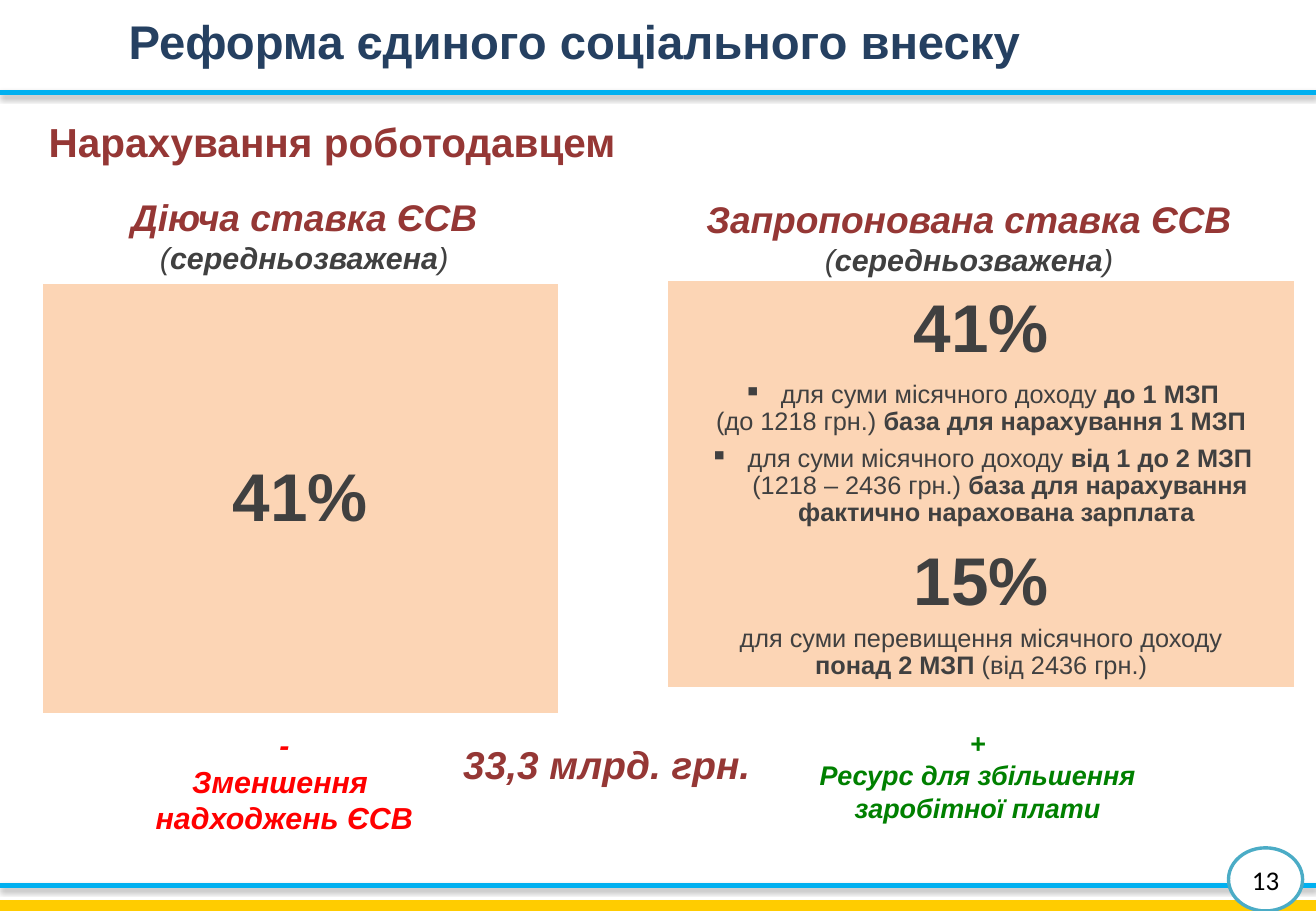
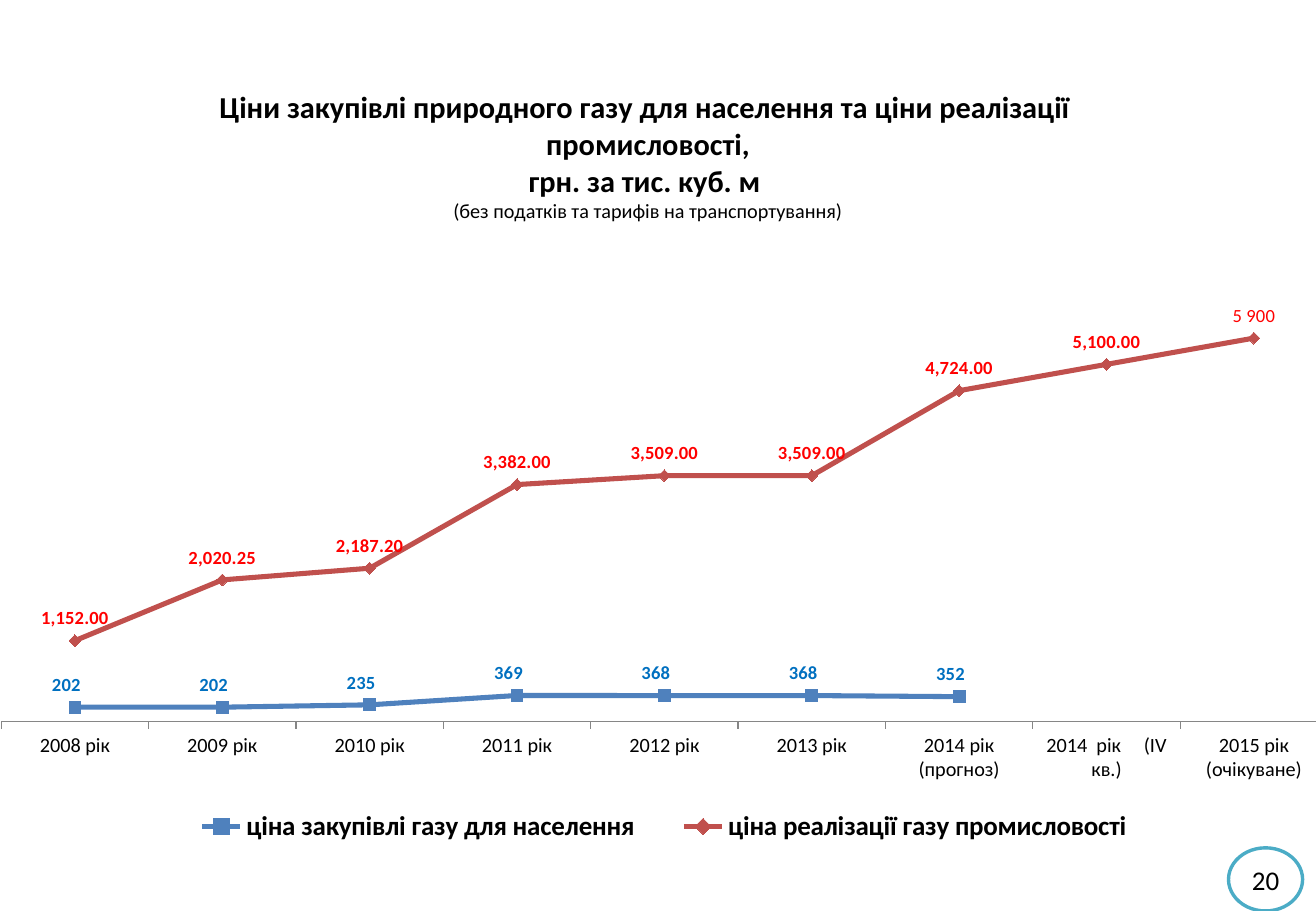
import lxml.etree
import pptx
import pptx.chart.data
import pptx.dml.color
import pptx.enum.chart
import pptx.enum.shapes
import pptx.enum.text
import pptx.oxml.ns
import pptx.util

WIDE = pptx.util.Inches(10.83)
HIGH = pptx.util.Inches(7.5)
PAGE = (0, 0, WIDE, HIGH)
NAVY, WINE, GRAY, PEACH = "254061", "953735", "404040", "FCD5B5"
SKY, GOLD, TEAL = "00B0F0", "FFCC00", "4BACC6"
RED, GREEN, BLACK, WHITE = "FF0000", "008000", "000000", "FFFFFF"
TOP = pptx.enum.text.MSO_ANCHOR.TOP
MID = pptx.enum.text.MSO_ANCHOR.MIDDLE
LEFT = pptx.enum.text.PP_ALIGN.LEFT
MARK = pptx.enum.chart.XL_MARKER_STYLE
ABOVE = pptx.enum.chart.XL_LABEL_POSITION.ABOVE
BOLD = {"bold": True}
THIN = {"bold": False}
SMALL = {"size": 15, "bold": False}
STRONG = {"size": 15, "bold": True}


def color(code):
    """Turn a hex string into a colour."""
    return pptx.dml.color.RGBColor.from_string(code)


def part(box, left, top, width, height):
    """Return a box given in percent of another box."""
    x, y, w, h = box
    return (int(x + w * left / 100), int(y + h * top / 100),
            int(w * width / 100), int(h * height / 100))


def put(item, vals):
    """Set attributes from a dict of format values."""
    for key, val in vals.items():
        setattr(item, key, val)


def style(font, vals):
    """Format a font, with its colour as hex and its size in points."""
    vals = dict(vals)
    if "color" in vals:
        font.color.rgb = color(vals.pop("color"))
    if "size" in vals:
        vals["size"] = pptx.util.Pt(vals["size"])
    put(font, vals)


def node(root, tag, **vals):
    """Add a drawing element below another one."""
    vals = {key: str(val) for key, val in vals.items()}
    return lxml.etree.SubElement(root, pptx.oxml.ns.qn(tag), vals)


def write(frame, base, paras):
    """Fill a text frame with paragraphs of formatted runs."""
    for num, (runs, form) in enumerate(paras):
        para = frame.paragraphs[0] if num == 0 else frame.add_paragraph()
        form = {"alignment": pptx.enum.text.PP_ALIGN.CENTER} | form
        sign = form.pop("sign", None)
        put(para, form)
        if sign:
            props = para._p.get_or_add_pPr()
            dent = pptx.util.Inches(0.31)
            props.set("marL", str(dent))
            props.set("indent", str(-dent))
            node(props, "a:buChar", char=sign)
        for text, vals in runs:
            run = para.add_run()
            run.text = text
            style(run.font, base | vals)


def note(slide, box, base, paras):
    """Add a wrapped text box."""
    frame = slide.shapes.add_textbox(*box).text_frame
    frame.word_wrap = True
    write(frame, base, paras)


def fill(holder, box, base, text, gap):
    """Place a placeholder and fill it with one plain line."""
    put(holder, dict(zip(("left", "top", "width", "height"), box)))
    frame = holder.text_frame
    put(frame, {"vertical_anchor": TOP, "word_wrap": True,
                "auto_size": pptx.enum.text.MSO_AUTO_SIZE.NONE})
    write(frame, base, [([(text, {})], {"alignment": LEFT, "space_before": pptx.util.Pt(gap)})])
    props = frame.paragraphs[0]._p.get_or_add_pPr()
    put_off = {"marL": "0", "indent": "0"}
    for key, val in put_off.items():
        props.set(key, val)
    node(props, "a:buNone")


def rule(slide, box):
    """Draw a shaded line along the top of a box."""
    x, y, w, _ = box
    line = slide.shapes.add_connector(pptx.enum.shapes.MSO_CONNECTOR.STRAIGHT, x, y, x + w, y)
    line.line.color.rgb = color(SKY)
    line.line.width = pptx.util.Pt(3)
    list_ = node(line._element.spPr, "a:effectLst")
    shade = node(list_, "a:outerShdw", blurRad=pptx.util.Pt(3.1),
                 dist=pptx.util.Pt(1.8), dir=5400000, rotWithShape=0)
    node(node(shade, "a:srgbClr", val=BLACK), "a:alpha", val=35000)


def shape(slide, kind, box, tint):
    """Add a flat filled shape without outline."""
    item = slide.shapes.add_shape(kind, *box)
    item.shadow.inherit = False
    item.fill.solid()
    item.fill.fore_color.rgb = color(tint)
    item.line.fill.background()
    return item


def badge(slide, num):
    """Add the round page number."""
    item = shape(slide, pptx.enum.shapes.MSO_SHAPE.OVAL, part(PAGE, 93.35, 93.07, 5.63, 6.93), WHITE)
    item.line.color.rgb = color(TEAL)
    item.line.width = pptx.util.Pt(2)
    put(item.text_frame, {"margin_left": 0, "margin_right": 0, "margin_top": 0,
                          "margin_bottom": 0, "vertical_anchor": MID})
    write(item.text_frame, {"name": "Calibri", "size": 16, "color": BLACK}, [([(num, {})], {})])


def bands(slide):
    """Draw the head rule and the foot bands."""
    rule(slide, part(PAGE, 0, 10.13, 100, 0))
    shape(slide, pptx.enum.shapes.MSO_SHAPE.RECTANGLE, part(PAGE, 0, 98.8, 100, 1.2), GOLD)
    rule(slide, part(PAGE, 0, 97.2, 100, 0))


def rate(slide, box, span, head, rows):
    """Place a caption above a one-column table of rates."""
    note(slide, part(box, span[0], 0, span[1], 20),
         {"name": "Arial", "size": 22, "color": WINE, "bold": True, "italic": True}, head)
    area = part(box, 0, 18.2, 100, 81.8)
    table = slide.shapes.add_table(len(rows), 1, *area).table
    put(table, {"first_row": False, "horz_banding": False})
    for num, (share, paras) in enumerate(rows):
        table.rows[num].height = int(area[3] * share / 100)
        cell = table.cell(num, 0)
        edge = pptx.util.Inches(0.02)
        put(cell, {"vertical_anchor": MID, "margin_top": edge, "margin_bottom": edge})
        for side in ("a:lnL", "a:lnR", "a:lnT", "a:lnB"):
            node(node(cell._tc.get_or_add_tcPr(), side), "a:noFill")
        cell.fill.solid()
        cell.fill.fore_color.rgb = color(PEACH)
        write(cell.text_frame, {"name": "Arial", "size": 40, "color": GRAY, "bold": True}, paras)


def reform(deck):
    """Build the slide that compares the two rates."""
    slide = deck.slides.add_slide(deck.slide_layouts[1])
    bands(slide)
    bold = {"name": "Arial", "bold": True}
    fill(slide.shapes.title, part(PAGE, 8.86, 0.67, 89.84, 9.47),
         bold | {"size": 28, "color": NAVY}, "Реформа єдиного соціального внеску", 5.6)
    fill(slide.placeholders[1], part(PAGE, 2.77, 12.13, 89.84, 6.27),
         bold | {"size": 24, "color": WINE}, "Нарахування роботодавцем", 4.8)

    dim = {"size": 18, "color": GRAY}
    mean = [("(", dim | THIN), ("середньозважена", dim), (")", dim | THIN)]
    gap = pptx.util.Pt(3)
    big = {"space_before": gap, "space_after": gap}
    tight = {"line_spacing": 0.96}
    item = tight | {"space_before": pptx.util.Pt(6), "sign": "▪"}
    rate(slide, part(PAGE, 3.23, 20.67, 39.15, 57.6), (11.8, 78),
         [([("Діюча ставка ЄСВ ", {})] + mean, {})],
         [(100, [([("41%", {})], big)])])
    rate(slide, part(PAGE, 50.78, 20.93, 47.55, 54.2), (2.9, 90.3),
         [([("Запропонована ставка ЄСВ", {})], {}), (mean, {})],
         [(63, [([("41%", {})], big),
                ([("для суми місячного доходу ", SMALL), ("до 1 МЗП", STRONG)], item),
                ([("(до 1218 грн.) ", SMALL), ("база для нарахування 1 МЗП", STRONG)], tight),
                ([("для суми місячного доходу ", SMALL), ("від 1 до 2 МЗП ", STRONG),
                  ("(1218 – 2436 грн.) ", SMALL),
                  ("база для нарахування фактично нарахована зарплата ", STRONG)], item)]),
          (37, [([("15%", {})], big),
                ([("для суми перевищення місячного доходу", SMALL)], tight),
                ([("понад 2 МЗП ", STRONG), ("(від 2436 грн.)", SMALL)], tight)])])

    sums = [(7.85, 79.07, 27.52, 18, RED, ("-", "Зменшення ", "надходжень ЄСВ")),
            (32.78, 80.67, 27.52, 23, WINE, ("33,3 млрд. грн. ",)),
            (59.56, 79.07, 29.46, 16, GREEN, ("+", "Ресурс для збільшення заробітної плати"))]
    for left, top, width, size, tint, lines in sums:
        note(slide, part(PAGE, left, top, width, 9),
             bold | {"italic": True, "size": size, "color": tint},
             [([(text, {})], {}) for text in lines])
    badge(slide, "13")


def layout(item, vals):
    """Give a chart part a fixed place, in shares of the chart."""
    root = item._element
    for old in root.findall(pptx.oxml.ns.qn("c:layout")):
        root.remove(old)
    frame = lxml.etree.Element(pptx.oxml.ns.qn("c:layout"))
    hand = node(frame, "c:manualLayout")
    for key, val in vals.items():
        node(hand, "c:" + key, val=val)
    follow = [kid for kid in root if kid.tag in
              {pptx.oxml.ns.qn(tag) for tag in ("c:overlay", "c:lineChart")}]
    follow[0].addprevious(frame)


def graph(slide, box):
    """Place the line chart of gas prices."""
    data = pptx.chart.data.CategoryChartData()
    data.categories = ["2008 рік", "2009 рік", "2010 рік", "2011 рік", "2012 рік", "2013 рік",
                       "2014 рік\n(прогноз)", "2014  рік     (IV кв.)", "2015 рік (очікуване)"]
    data.add_series("ціна закупівлі газу для населення",
                    [202, 202, 235, 369, 368, 368, 352, None, None])
    data.add_series("ціна реалізації газу промисловості",
                    [1152, 2020.25, 2187.2, 3382, 3509, 3509, 4724, 5100, 5475])
    kind = pptx.enum.chart.XL_CHART_TYPE.LINE_MARKERS
    chart = slide.shapes.add_chart(kind, *box, data).chart
    base = {"name": "Calibri", "color": BLACK}
    style(chart.font, base | {"size": 10})

    chart.has_title = True
    write(chart.chart_title.text_frame, base | {"size": 18, "bold": True},
          [([("Ціни закупівлі природного газу для населення та ціни реалізації  промисловості,", {})], {}),
           ([("грн. за тис. куб. м ", {})], {}),
           ([("(без податків та тарифів на транспортування)", {"size": 12, "bold": False})], {})])
    chart.chart_title.include_in_layout = False
    layout(chart.chart_title, {"xMode": "edge", "yMode": "edge", "x": 0.17, "y": 0.04})

    chart.has_legend = True
    put(chart.legend, {"position": pptx.enum.chart.XL_LEGEND_POSITION.BOTTOM,
                       "include_in_layout": False})
    style(chart.legend.font, base | BOLD | {"size": 16})
    edges = {"xMode": "edge", "yMode": "edge"}
    layout(chart.legend, edges | {"x": 0.13, "y": 0.93, "w": 0.75, "h": 0.06})
    plot = chart.plots[0]
    plot.vary_by_categories = False
    root = chart._chartSpace.chart.plotArea
    for old in root.findall(pptx.oxml.ns.qn("c:layout")):
        root.remove(old)
    frame = lxml.etree.Element(pptx.oxml.ns.qn("c:layout"))
    root.insert(0, frame)
    hand = node(frame, "c:manualLayout")
    place = {"layoutTarget": "inner"} | edges | {"x": 0.01, "y": 0.31, "w": 0.99, "h": 0.52}
    for key, val in place.items():
        node(hand, "c:" + key, val=val)

    put(chart.value_axis, {"visible": False, "has_major_gridlines": False,
                           "minimum_scale": 0, "maximum_scale": 6000})
    axis = chart.category_axis
    axis.major_tick_mark = pptx.enum.chart.XL_TICK_MARK.OUTSIDE
    axis.format.line.color.rgb = color("868686")
    style(axis.tick_labels.font, base | {"size": 12})

    looks = [("4F81BD", "0070C0", MARK.SQUARE, "#,##0_р_._-"),
             ("C0504D", RED, MARK.DIAMOND, "#,##0.00")]
    for line, (tint, ink, mark, form) in zip(plot.series, looks):
        line.smooth = False
        line.format.line.color.rgb = color(tint)
        line.format.line.width = pptx.util.Pt(3)
        put(line.marker, {"style": mark, "size": 7})
        line.marker.format.fill.solid()
        line.marker.format.fill.fore_color.rgb = color(tint)
        line.marker.format.line.color.rgb = color(tint)
        put(line.data_labels, {"show_value": True, "position": ABOVE,
                               "number_format": form, "number_format_is_linked": False})
        style(line.data_labels.font, base | BOLD | {"size": 11, "color": ink})
    last = plot.series[1].points[8].data_label
    write(last.text_frame, base | THIN | {"size": 11, "color": RED}, [([("5 900", {})], {})])
    last.position = ABOVE


def prices(deck):
    """Build the slide with the price chart."""
    slide = deck.slides.add_slide(deck.slide_layouts[6])
    graph(slide, part(PAGE, -0.92, 5.6, 101.85, 88.67))
    badge(slide, "20")


def main():
    """Build and save the deck."""
    deck = pptx.Presentation()
    put(deck, {"slide_width": WIDE, "slide_height": HIGH})
    reform(deck)
    prices(deck)
    deck.save("out.pptx")


if __name__ == "__main__":
    main()
